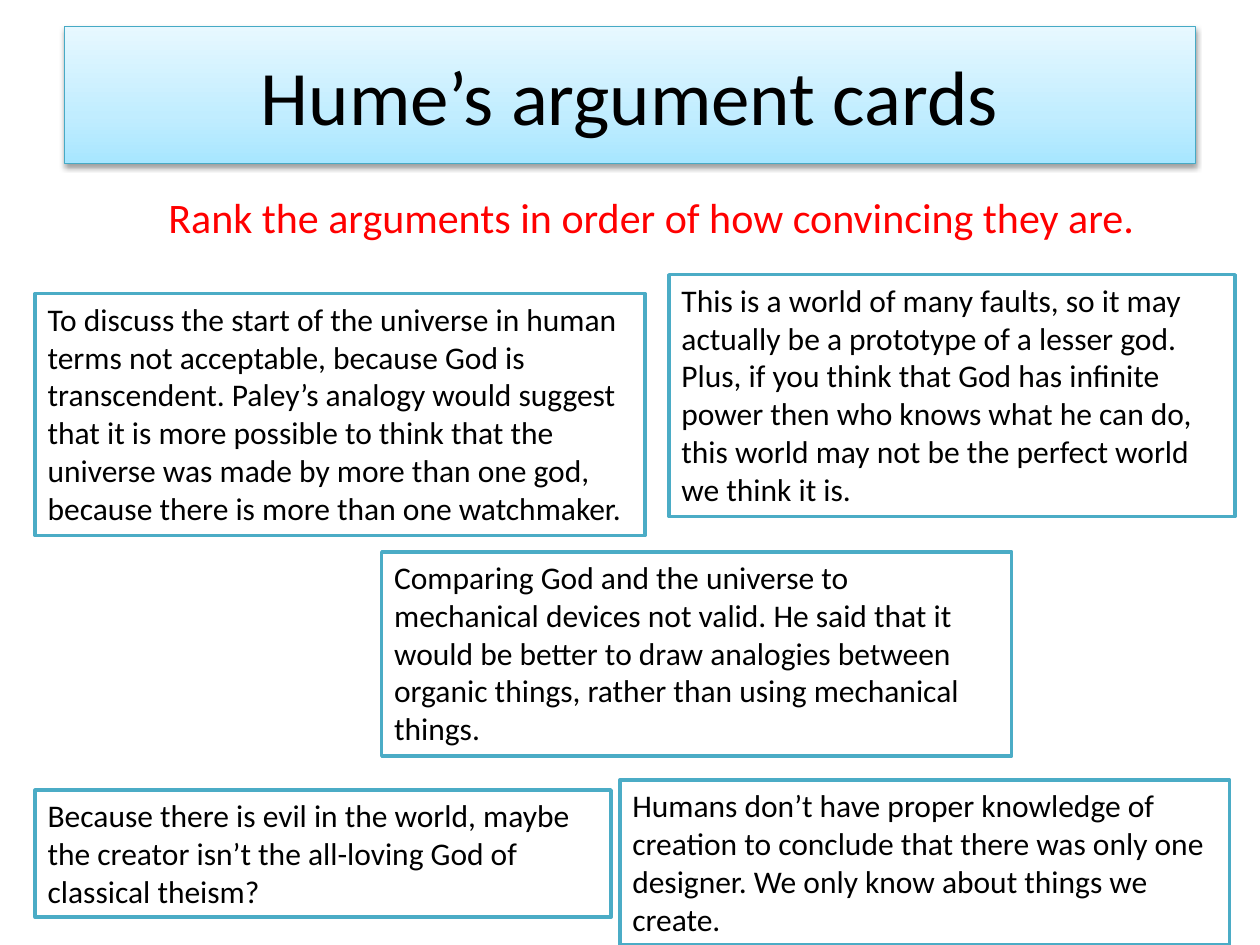
from copy import deepcopy
from dataclasses import dataclass

from lxml.etree import SubElement
from pptx import Presentation
from pptx.dml.color import RGBColor
from pptx.enum.shapes import MSO_SHAPE
from pptx.enum.text import MSO_ANCHOR, MSO_AUTO_SIZE, PP_ALIGN
from pptx.oxml.ns import qn
from pptx.shapes.autoshape import Shape
from pptx.slide import Slide
from pptx.util import Inches, Pt

BLACK = RGBColor(0x00, 0x00, 0x00)
WHITE = RGBColor(0xFF, 0xFF, 0xFF)
RED = RGBColor(0xFF, 0x00, 0x00)
TEAL = RGBColor(0x4B, 0xAC, 0xC6)
EDGE = RGBColor(0x46, 0xAA, 0xC5)
STOPS = (
    (0, RGBColor(0xA7, 0xE6, 0xFF)),
    (0.35, RGBColor(0xC1, 0xED, 0xFF)),
    (1, RGBColor(0xE7, 0xF8, 0xFF)),
)

TITLE = {"size": Pt(44), "name": "Calibri"}
PROMPT = {"size": Pt(24), "name": "Calibri"}
BODY = {"size": Pt(18), "name": "Calibri"}
FRAME = {"word_wrap": True, "vertical_anchor": MSO_ANCHOR.TOP}
MIDDLE = {**FRAME, "vertical_anchor": MSO_ANCHOR.MIDDLE}
GROW = {**FRAME, "auto_size": MSO_AUTO_SIZE.SHAPE_TO_FIT_TEXT}


@dataclass
class Box:
    left: float
    top: float
    width: float
    height: float
    text: str


HEAD = Box(0.51, 0.21, 8.98, 1.09, "Hume’s argument cards")
TASK = Box(0.67, 1.47, 9, 4.95,
           "Rank the arguments in order of how convincing they are.")
CARDS = [
    Box(3.03, 4.38, 5, 1.62,
        "Comparing God and the universe to mechanical devices not valid. "
        "He said that it would be better to draw analogies between organic "
        "things, rather than using mechanical things."),
    Box(4.92, 6.19, 4.84, 1.31,
        "Humans don’t have proper knowledge of creation to conclude that "
        "there was only one designer. We only know about things we create."),
    Box(5.31, 2.18, 4.49, 1.92,
        "This is a world of many faults, so it may actually be a prototype "
        "of a lesser god. Plus, if you think that God has infinite power "
        "then who knows what he can do, this world may not be the perfect "
        "world we think it is."),
    Box(0.28, 6.27, 4.57, 1.01,
        "Because there is evil in the world, maybe the creator isn’t the "
        "all-loving God of classical theism?"),
    Box(0.28, 2.33, 4.84, 1.92,
        "To discuss the start of the universe in human terms not acceptable, "
        "because God is transcendent. Paley’s analogy would suggest that it "
        "is more possible to think that the universe was made by more than "
        "one god, because there is more than one watchmaker."),
]


def place(box: Box) -> list[int]:
    return [Inches(n) for n in (box.left, box.top, box.width, box.height)]


def style(item: object, look: dict) -> None:
    for key, value in look.items():
        setattr(item, key, value)


def write(shape: Shape, text: str, frame: dict, font: dict,
          color: RGBColor, align: PP_ALIGN) -> None:
    style(shape.text_frame, frame)
    para = shape.text_frame.paragraphs[0]
    para.alignment = align
    run = para.add_run()
    run.text = text
    style(run.font, font)
    run.font.color.rgb = color


def draw_rect(slide: Slide, box: Box, color: RGBColor, width: float) -> Shape:
    shape = slide.shapes.add_shape(MSO_SHAPE.RECTANGLE, *place(box))
    shape.shadow.inherit = False
    shape.line.color.rgb = color
    shape.line.width = Pt(width)
    return shape


def draw_head(slide: Slide, box: Box) -> None:
    shape = draw_rect(slide, box, EDGE, 0.75)
    shape.fill.gradient()
    shape.fill.gradient_angle = 90
    props = shape._element.spPr
    stops = props.find(f".//{qn('a:gsLst')}")
    stops.insert(1, deepcopy(stops[0]))
    for stop, (spot, color) in zip(shape.fill.gradient_stops, STOPS):
        stop.position = spot
        stop.color.rgb = color
    cast = SubElement(props.find(qn("a:effectLst")), qn("a:outerShdw"),
                      blurRad=str(Pt(3.1)), dist=str(Pt(1.6)),
                      dir="5400000", rotWithShape="0")
    tint = SubElement(cast, qn("a:srgbClr"), val=str(BLACK))
    SubElement(tint, qn("a:alpha"), val="38000")
    write(shape, box.text, MIDDLE, TITLE, BLACK, PP_ALIGN.CENTER)


def draw_task(slide: Slide, box: Box) -> None:
    shape = slide.shapes.add_textbox(*place(box))
    write(shape, box.text, FRAME, PROMPT, RED, PP_ALIGN.CENTER)


def draw_card(slide: Slide, box: Box) -> None:
    shape = draw_rect(slide, box, TEAL, 2)
    shape.fill.solid()
    shape.fill.fore_color.rgb = WHITE
    write(shape, box.text, GROW, BODY, BLACK, PP_ALIGN.LEFT)


def main() -> None:
    deck = Presentation()
    style(deck, {"slide_width": Inches(10), "slide_height": Inches(7.5)})
    slide = deck.slides.add_slide(deck.slide_layouts[6])
    draw_head(slide, HEAD)
    draw_task(slide, TASK)
    for card in CARDS:
        draw_card(slide, card)
    deck.save("out.pptx")


if __name__ == "__main__":
    main()
